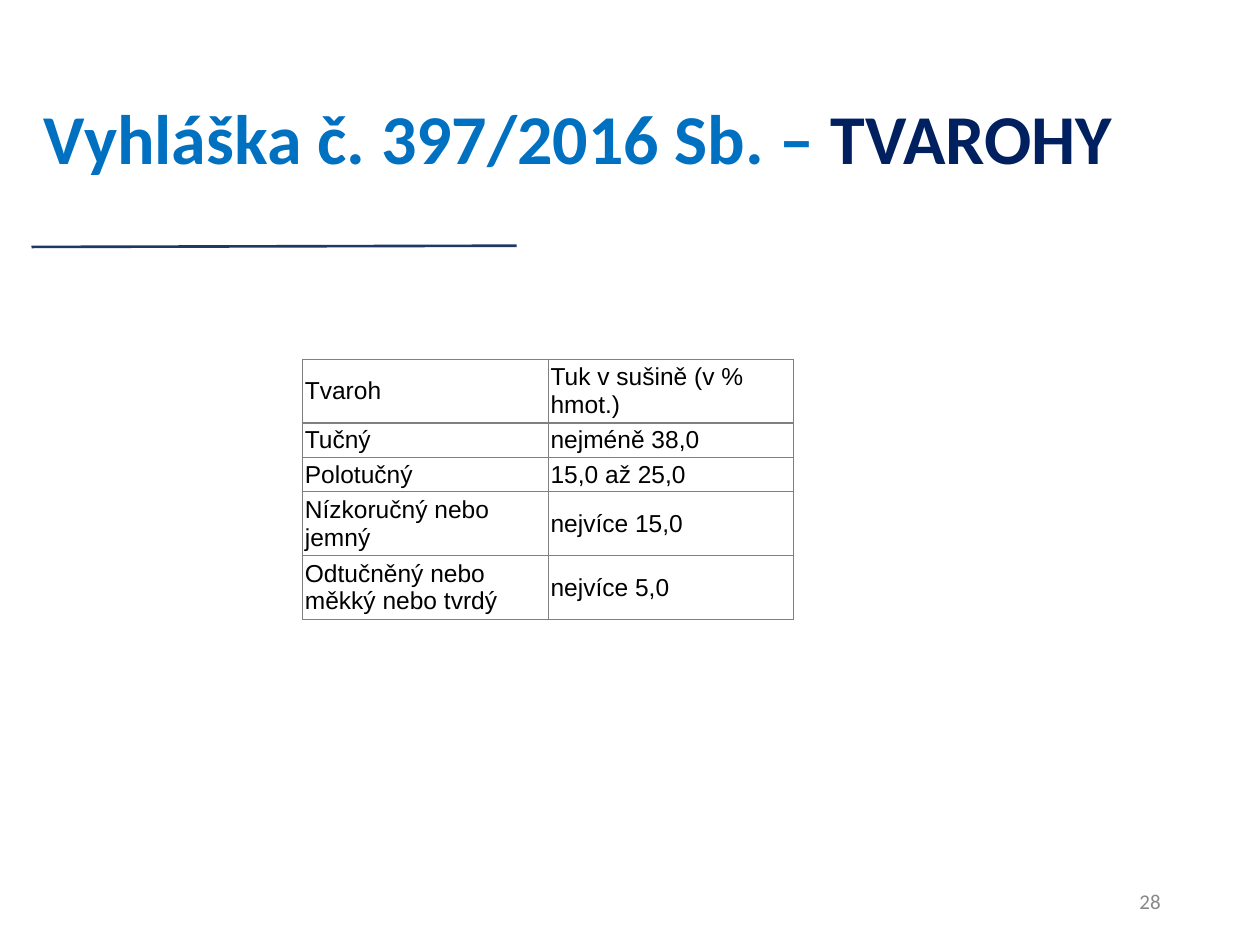
import pptx
import pptx.dml.color
import pptx.enum.text
import pptx.oxml
import pptx.oxml.ns
import pptx.util

WIDTH, HEIGHT = 10, 7.5
MIDDLE = pptx.enum.text.MSO_ANCHOR.MIDDLE
INCH = pptx.util.Inches

CURDS = [
    ("Tvaroh", "Tuk v sušině (v % hmot.)"),
    ("Tučný", "nejméně 38,0"),
    ("Polotučný", "15,0 až 25,0"),
    ("Nízkoručný nebo jemný", "nejvíce 15,0"),
    ("Odtučněný nebo měkký nebo tvrdý", "nejvíce 5,0"),
]


def colour(hex_value):
    """Turn a hex string into a colour."""
    return pptx.dml.color.RGBColor.from_string(hex_value)


def add_run(paragraph, text, size, font, hex_value, bold=False):
    """Append one styled run to a paragraph."""
    run = paragraph.add_run()
    run.text = text
    run.font.size = pptx.util.Pt(size)
    run.font.name = font
    run.font.bold = bold
    run.font.color.rgb = colour(hex_value)


def add_text(slide, left, top, width, height):
    """Add a wrapping, vertically centred text box and return its paragraph."""
    box = slide.shapes.add_textbox(INCH(left), INCH(top), INCH(width), INCH(height))
    box.text_frame.word_wrap = True
    box.text_frame.vertical_anchor = MIDDLE
    return box.text_frame.paragraphs[0]


def add_rule(slide, start, end, hex_value, weight):
    """Draw a plain line without a shadow."""
    rule = slide.shapes.add_connector(
        pptx.enum.shapes.MSO_CONNECTOR.STRAIGHT, *(INCH(value) for value in start + end)
    )
    rule.line.color.rgb = colour(hex_value)
    rule.line.width = pptx.util.Pt(weight)
    rule._element.spPr.append(pptx.oxml.parse_xml(
        f"<a:effectLst {pptx.oxml.ns.nsdecls('a')}/>"))


def border_cell(cell, hex_value, weight):
    """Put the same border on all four sides of a cell."""
    properties = cell._tc.get_or_add_tcPr()
    for position, side in enumerate(("lnL", "lnR", "lnT", "lnB")):
        properties.insert(position, pptx.oxml.parse_xml(
            f'<a:{side} {pptx.oxml.ns.nsdecls("a")} w="{pptx.util.Pt(weight)}">'
            f'<a:solidFill><a:srgbClr val="{hex_value}"/></a:solidFill></a:{side}>'))


def fill_cell(cell, text):
    """Style one table cell and write its text."""
    cell.fill.solid()
    cell.fill.fore_color.rgb = colour("FFFFFF")
    cell.vertical_anchor = MIDDLE
    cell.margin_left = cell.margin_right = INCH(0.02)
    cell.margin_top = cell.margin_bottom = INCH(0.02)
    border_cell(cell, "808080", 0.75)
    add_run(cell.text_frame.paragraphs[0], text, 14, "Arial", "000000")


def add_curd_table(slide, left, top, column_width, row_heights):
    """Add the table of curd types and their fat content."""
    columns = len(CURDS[0])
    table = slide.shapes.add_table(
        len(CURDS), columns, INCH(left), INCH(top),
        INCH(column_width * columns), INCH(sum(row_heights))
    ).table
    table.first_row = table.horz_banding = False
    for column in table.columns:
        column.width = INCH(column_width)
    for row, height, texts in zip(table.rows, row_heights, CURDS):
        row.height = INCH(height)
        for cell, text in zip(row.cells, texts):
            fill_cell(cell, text)


def main():
    """Build the slide and save it."""
    deck = pptx.Presentation()
    deck.slide_width, deck.slide_height = INCH(WIDTH), INCH(HEIGHT)
    slide = deck.slides.add_slide(deck.slide_layouts[6])
    margin = WIDTH / 40

    number = add_text(slide, 7.06, 6.95, 2.25, 0.4)
    number.alignment = pptx.enum.text.PP_ALIGN.RIGHT
    add_run(number, "28", 12, "Calibri", "888888")

    add_curd_table(slide, 2.4, 2.85, 1.95, [0.26] * 4 + [0.48])
    add_rule(slide, (margin, 1.96), (4.1, 1.95), "1F3864", 1.5)

    title = add_text(slide, margin, 0.4, 9.58, 1.45)
    title.line_spacing = 0.9
    add_run(title, "Vyhláška č. 397/2016 Sb. – ", 40, "Calibri", "0070C0", bold=True)
    add_run(title, "TVAROHY", 40, "Calibri", "002060", bold=True)

    deck.save("out.pptx")


if __name__ == "__main__":
    main()
